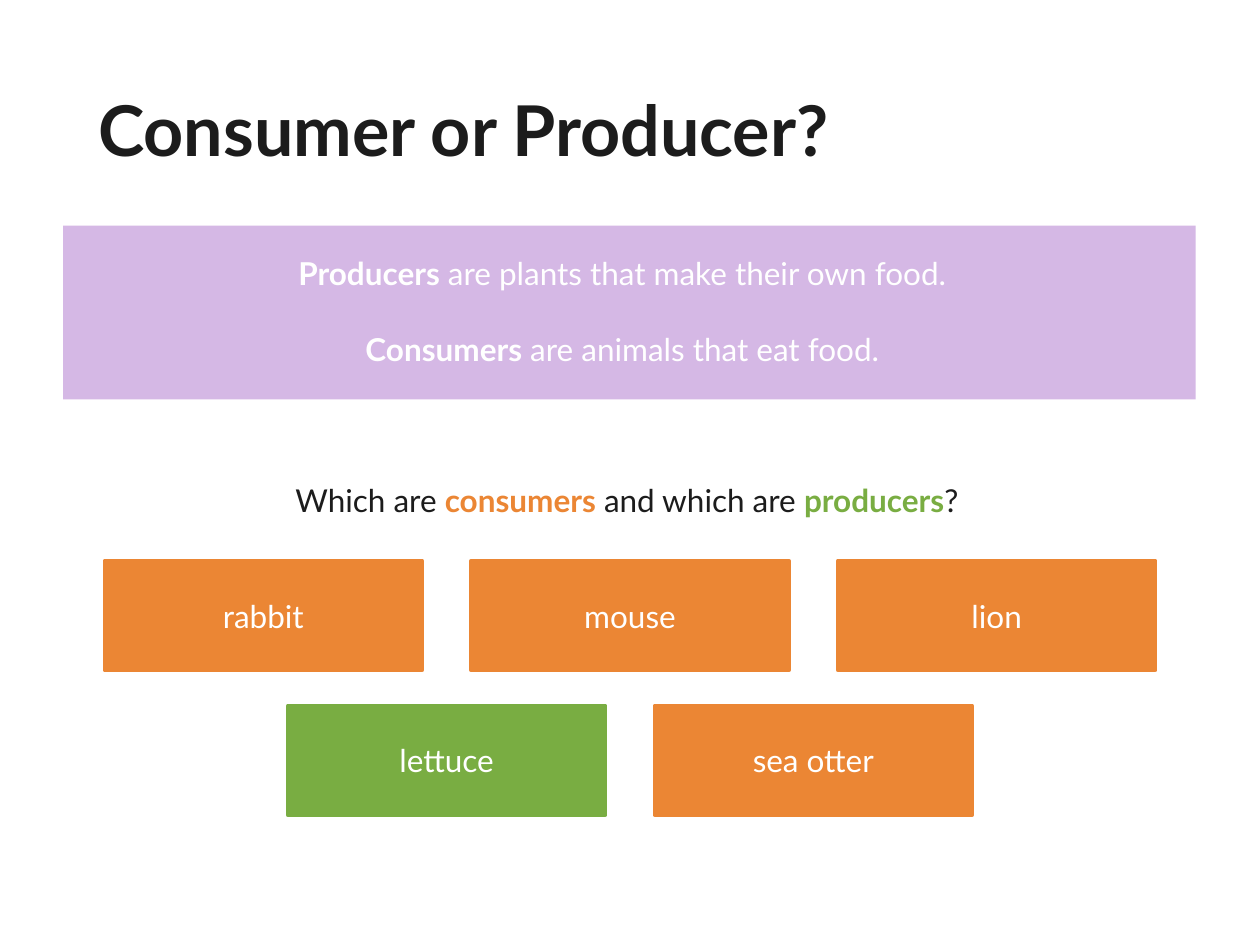
from dataclasses import dataclass

import pptx
import pptx.dml.color
import pptx.enum.shapes
import pptx.enum.text
import pptx.util

Inches = pptx.util.Inches
Pt = pptx.util.Pt
Color = pptx.dml.color.RGBColor
Align = pptx.enum.text.PP_ALIGN
Anchor = pptx.enum.text.MSO_ANCHOR


@dataclass(frozen=True)
class Theme:
    font: str = "Lato"
    ink: Color = Color.from_string("1C1C1C")
    white: Color = Color.from_string("FFFFFF")
    lilac: Color = Color.from_string("D5B8E5")
    consumer: Color = Color.from_string("EB8634")
    producer: Color = Color.from_string("79AD42")
    title_size: Pt = Pt(40)
    body_size: Pt = Pt(18)
    card_outline: Pt = Pt(2.25)


@dataclass(frozen=True)
class Box:
    left: float
    top: float
    width: float
    height: float

    def emu(self) -> tuple:
        return tuple(Inches(v) for v in (self.left, self.top, self.width, self.height))


@dataclass(frozen=True)
class Piece:
    text: str
    color: Color
    bold: bool = False


@dataclass(frozen=True)
class Card:
    label: str
    color: Color


THEME = Theme()
SLIDE_WIDTH, SLIDE_HEIGHT = 10, 7.5
CARD_WIDTH, CARD_HEIGHT, CARD_GAP = 2.52, 0.87, 0.39
CARDS_TOP, ROW_PITCH = 4.45, 1.15


def write_line(paragraph, pieces: list[Piece], size: Pt, align: Align) -> None:
    paragraph.alignment = align
    paragraph.font.name = THEME.font
    paragraph.font.size = size
    for piece in pieces:
        run = paragraph.add_run()
        run.text = piece.text
        run.font.bold = piece.bold
        run.font.color.rgb = piece.color


def add_text(slide, box: Box, lines: list[list[Piece]], size: Pt = THEME.body_size,
             align: Align = Align.CENTER, gap: Pt = Pt(0)):
    frame = slide.shapes.add_textbox(*box.emu()).text_frame
    frame.word_wrap = True
    for i, pieces in enumerate(lines):
        paragraph = frame.add_paragraph() if i else frame.paragraphs[0]
        if i:
            paragraph.space_before = gap
        write_line(paragraph, pieces, size, align)
    return frame


def add_panel(slide, box: Box, color: Color):
    panel = slide.shapes.add_shape(pptx.enum.shapes.MSO_SHAPE.RECTANGLE, *box.emu())
    panel.shadow.inherit = False
    panel.fill.solid()
    panel.fill.fore_color.rgb = color
    panel.line.fill.background()
    return panel


def add_card(slide, box: Box, card: Card) -> None:
    panel = add_panel(slide, box, card.color)
    panel.line.color.rgb = card.color
    panel.line.width = THEME.card_outline
    panel.text_frame.vertical_anchor = Anchor.MIDDLE
    write_line(panel.text_frame.paragraphs[0], [Piece(card.label, THEME.white)],
               THEME.body_size, Align.CENTER)


def add_card_row(slide, top: float, cards: list[Card]) -> None:
    pitch = CARD_WIDTH + CARD_GAP
    left = (SLIDE_WIDTH - len(cards) * pitch + CARD_GAP) / 2
    for i, card in enumerate(cards):
        add_card(slide, Box(left + i * pitch, top, CARD_WIDTH, CARD_HEIGHT), card)


def main() -> None:
    deck = pptx.Presentation()
    deck.slide_width, deck.slide_height = Inches(SLIDE_WIDTH), Inches(SLIDE_HEIGHT)
    slide = deck.slides.add_slide(deck.slide_layouts[6])

    # Definitions panel
    add_panel(slide, Box(0.5, 1.79, 8.99, 1.38), THEME.lilac)

    # Title
    title = add_text(slide, Box(0.5, 0.52, 8.99, 1.09),
                     [[Piece("Consumer or Producer?", THEME.ink, True)]],
                     THEME.title_size, Align.LEFT)
    title.vertical_anchor = Anchor.MIDDLE
    title.margin_left = title.margin_right = Inches(0.28)
    title.margin_top = title.margin_bottom = Inches(0.28)
    title.paragraphs[0].line_spacing = 0.9

    # Definitions
    definitions = [("Producers", " are plants that make their own food."),
                   ("Consumers", " are animals that eat food.")]
    add_text(slide, Box(2.15, 1.97, 5.58, 1.01),
             [[Piece(term, THEME.white, True), Piece(meaning, THEME.white)]
              for term, meaning in definitions], gap=Pt(21.6))

    # Question
    add_text(slide, Box(0.8, 3.77, 8.35, 0.4), [[
        Piece("Which are ", THEME.ink),
        Piece("consumers", THEME.consumer, True),
        Piece(" and which are ", THEME.ink),
        Piece("producers", THEME.producer, True),
        Piece("?", THEME.ink),
    ]])

    # Answer cards, each row centred on the slide
    card_rows = [
        [Card("rabbit", THEME.consumer), Card("mouse", THEME.consumer),
         Card("lion", THEME.consumer)],
        [Card("lettuce", THEME.producer), Card("sea otter", THEME.consumer)],
    ]
    for row, cards in enumerate(card_rows):
        add_card_row(slide, CARDS_TOP + row * ROW_PITCH, cards)

    deck.save("out.pptx")


if __name__ == "__main__":
    main()
